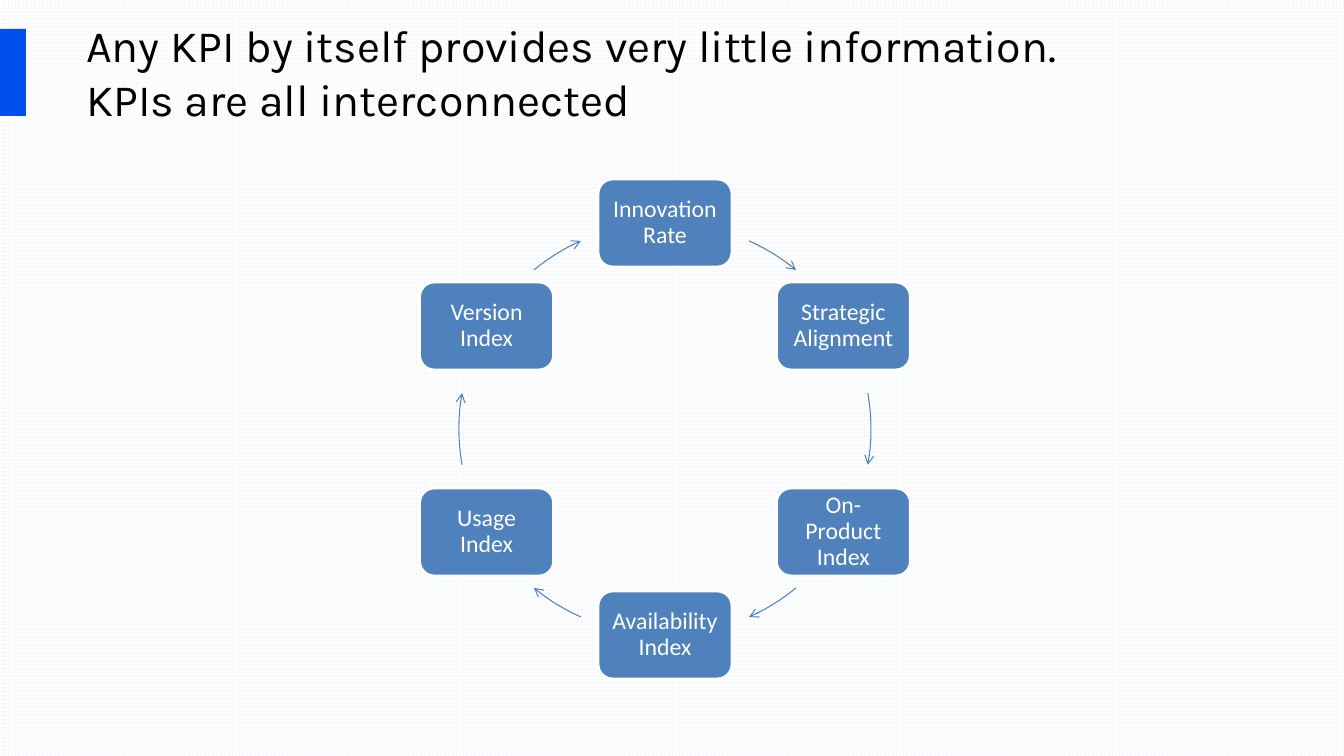
from math import cos, sin, radians

from lxml.etree import SubElement
from pptx import Presentation
from pptx.dml.color import RGBColor
from pptx.enum.dml import MSO_PATTERN
from pptx.enum.shapes import MSO_SHAPE
from pptx.enum.text import MSO_ANCHOR, MSO_AUTO_SIZE, PP_ALIGN
from pptx.oxml.ns import qn
from pptx.util import Pt

WIDE, HIGH = 1344, 756
SCALE = 12192000 / WIDE
COLORS = {
    "bar": "0050EF",
    "node": "4F81BD",
    "white": "FFFFFF",
    "grid": "F6F8FC",
    "ink": "000000",
}


def px(count):
    return round(count * SCALE)


def color(name):
    return RGBColor.from_string(COLORS[name])


def write(frame, text, font="Calibri", size=17, ink="white",
          align=PP_ALIGN.CENTER, gap=1.0, inset=None):
    frame.word_wrap = True
    frame.auto_size = MSO_AUTO_SIZE.NONE
    frame.vertical_anchor = MSO_ANCHOR.MIDDLE
    if inset is not None:
        frame.margin_left = frame.margin_right = px(inset)
        frame.margin_top = frame.margin_bottom = px(inset)
    frame.text = text
    para = frame.paragraphs[0]
    para.alignment = align
    para.line_spacing = gap
    for run in para.runs:
        run.font.name = font
        run.font.size = Pt(size)
        run.font.color.rgb = color(ink)


class Deck:
    def __init__(self):
        self.show = Presentation()
        self.show.slide_width = px(WIDE)
        self.show.slide_height = px(HIGH)
        self.slide = self.show.slides.add_slide(self.show.slide_layouts[5])
        self.shapes = self.slide.shapes

    def paper(self):
        fill = self.slide.background.fill
        fill.patterned()
        fill.pattern = MSO_PATTERN.LARGE_GRID
        fill.fore_color.rgb = color("grid")
        fill.back_color.rgb = color("white")

    def title(self, text, left, top, width, height):
        title = self.shapes.title
        title.left, title.top = px(left), px(top)
        title.width, title.height = px(width), px(height)
        write(title.text_frame, text, font="Karla", size=32, ink="ink",
              align=PP_ALIGN.LEFT)

    def box(self, kind, left, top, width, height, fill):
        box = self.shapes.add_shape(kind, px(left), px(top), px(width), px(height))
        box.shadow.inherit = False
        box.fill.solid()
        box.fill.fore_color.rgb = color(fill)
        box.line.fill.background()
        return box

    def node(self, text, x, y, width=134, height=88):
        node = self.box(MSO_SHAPE.ROUNDED_RECTANGLE, x - width / 2, y - height / 2,
                        width, height, "node")
        node.line.color.rgb = color("white")
        node.line.width = Pt(2)
        write(node.text_frame, text, gap=0.9, inset=7)

    def arc(self, x, y, radius, start, sweep):
        left, top, right, base = (px(x - radius), px(y - radius),
                                  px(x + radius), px(y + radius))
        path = self.shapes.build_freeform(left, top)
        path.add_line_segments([(right, top), (right, base), (left, base)])
        arc = path.convert_to_shape()
        arc.shadow.inherit = False
        arc.fill.background()
        arc.line.color.rgb = color("node")
        arc.line.width = Pt(0.75)
        props = arc.element.spPr
        SubElement(props.find(qn("a:ln")), qn("a:tailEnd"), type="arrow")
        curve = props.find(".//" + qn("a:path"))
        for step in list(curve):
            curve.remove(step)
        turn, reach = radians(start), str(px(radius))
        SubElement(SubElement(curve, qn("a:moveTo")), qn("a:pt"),
                   x=str(px(radius + radius * cos(turn))),
                   y=str(px(radius + radius * sin(turn))))
        SubElement(curve, qn("a:arcTo"), wR=reach, hR=reach,
                   stAng=str(round(start % 360 * 60000)),
                   swAng=str(round(sweep * 60000)))


def main():
    deck = Deck()
    deck.paper()
    deck.box(MSO_SHAPE.RECTANGLE, 0, 29, 26, 87, "bar")
    deck.title("Any KPI by itself provides very little information.\v"
               "KPIs are all interconnected", 76, 29, 1202, 85)

    x, y, radius = 665, 429, 206
    cycle = [
        ("Innovation Rate", -58.2, 7.7),
        ("Strategic Alignment", 0, 10),
        ("On-Product Index", 58.2, 7.7),
        ("Availability Index", 121.8, 7.7),
        ("Usage Index", 180, 10),
        ("Version Index", 238.2, 7.7),
    ]
    for i, (text, mid, half) in enumerate(cycle):
        turn = radians(360 / len(cycle) * i - 90)
        deck.node(text, x + radius * cos(turn), y + radius * sin(turn))
        deck.arc(x, y, radius, mid - half, half * 2)

    deck.show.save("out.pptx")


if __name__ == "__main__":
    main()
